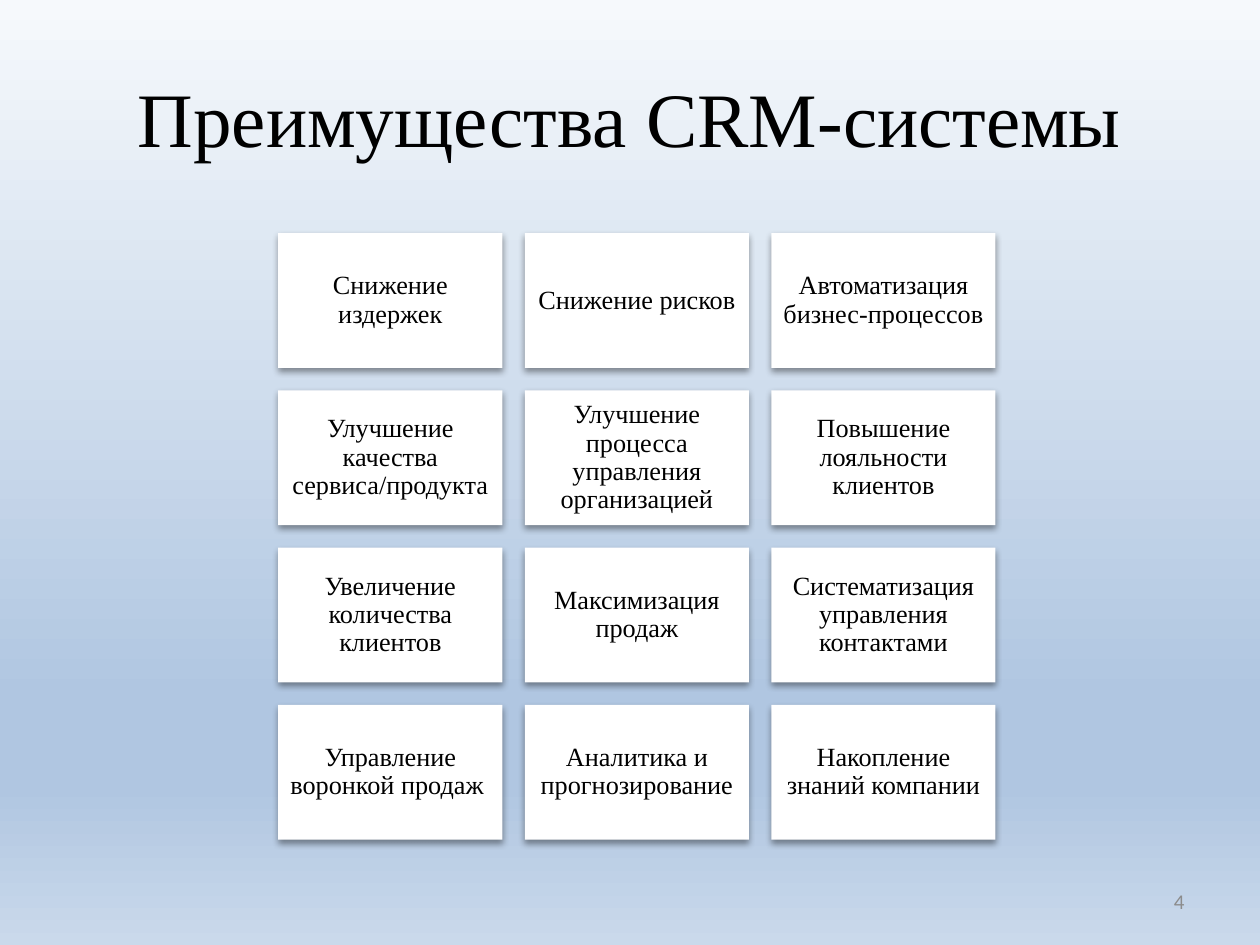
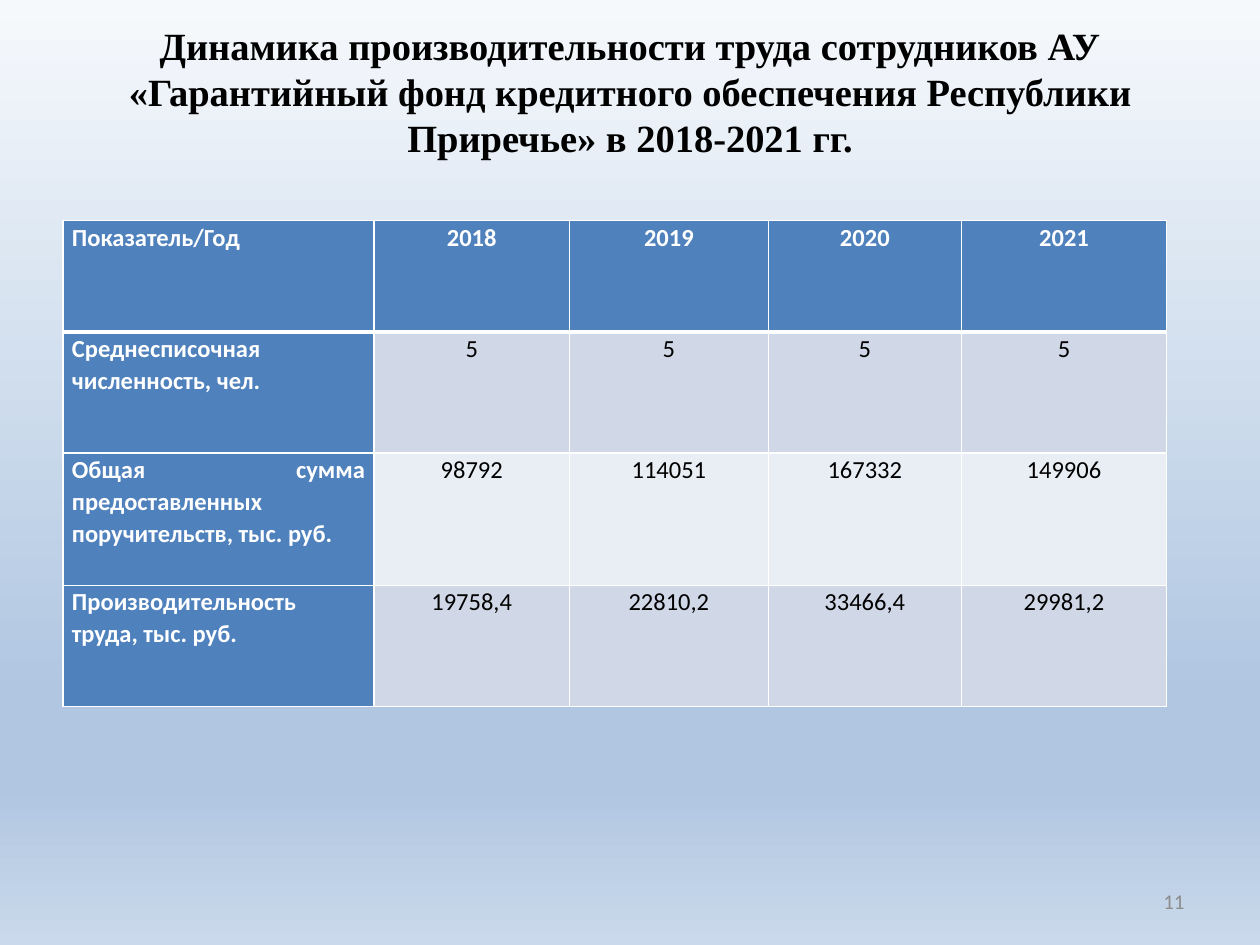
"""Build two slides: the benefits of a CRM system and staff productivity by year."""
from dataclasses import dataclass

import pptx
import pptx.dml.color
import pptx.enum.shapes
import pptx.enum.text
import pptx.oxml
import pptx.oxml.ns
import pptx.util

Cm = pptx.util.Cm
Pt = pptx.util.Pt
RGBColor = pptx.dml.color.RGBColor
Align = pptx.enum.text.PP_ALIGN
Anchor = pptx.enum.text.MSO_ANCHOR
qn = pptx.oxml.ns.qn
NS = pptx.oxml.ns.nsdecls("a")

BLACK = RGBColor(0x00, 0x00, 0x00)
WHITE = RGBColor(0xFF, 0xFF, 0xFF)
GREY = RGBColor(0x8C, 0x8C, 0x8C)
BLUE = RGBColor(0x4F, 0x81, 0xBD)
BAND_DARK = RGBColor(0xD0, 0xD8, 0xE8)
BAND_LIGHT = RGBColor(0xE9, 0xED, 0xF4)
SKY_TOP = RGBColor(0xF6, 0xF9, 0xFC)
SKY_MID = RGBColor(0xB0, 0xC6, 0xE1)
SKY_LOW = RGBColor(0xCA, 0xD9, 0xEB)
SKY_STOPS = [(0, SKY_TOP), (74, SKY_MID), (83, SKY_MID), (100, SKY_LOW)]

SERIF = "Times New Roman"
SANS = "Calibri"


@dataclass(frozen=True)
class Box:
    left: float
    top: float
    width: float
    height: float

    def emu(self) -> tuple:
        return tuple(Cm(v) for v in (self.left, self.top, self.width, self.height))


@dataclass(frozen=True)
class Title:
    text: str
    height: float
    size: float
    bold: bool = False


PAGE_NUMBER = Box(18.21, 17.65, 5.92, 1.02)
FIRST_CARD = Box(5.61, 4.7, 4.52, 2.72)
CARD_GAP = 0.45
CARD_COLUMNS = 3
BENEFITS = [
    "Снижение издержек", "Снижение рисков", "Автоматизация бизнес-процессов",
    "Улучшение качества сервиса/продукта", "Улучшение процесса управления организацией",
    "Повышение лояльности клиентов",
    "Увеличение количества клиентов", "Максимизация продаж",
    "Систематизация управления контактами",
    "Управление воронкой продаж ", "Аналитика и прогнозирование",
    "Накопление знаний компании",
]

TABLE_LEFT, TABLE_TOP = 1.27, 4.45
COLUMN_WIDTHS = [6.27, 3.94, 4.01, 3.89, 4.14]
ROW_HEIGHTS = [2.24, 2.44, 2.67, 2.44]
PRODUCTIVITY = [
    ["Показатель/Год", "2018", "2019", "2020", "2021"],
    ["Среднесписочная численность, чел.", "5", "5", "5", "5"],
    ["Общая сумма предоставленных поручительств, тыс. руб.",
     "98792", "114051", "167332", "149906"],
    ["Производительность труда, тыс. руб.", "19758,4", "22810,2", "33466,4", "29981,2"],
]


def write(tf, text: str, *, size: float, font: str = SERIF, color: RGBColor = BLACK,
          bold: bool = False, align=Align.CENTER, spacing: float = 1.0,
          after: float = 0) -> None:
    """Put one formatted paragraph into a text frame."""
    tf.word_wrap = True
    p = tf.paragraphs[0]
    p.alignment, p.line_spacing, p.space_after = align, spacing, Pt(after)
    r = p.add_run()
    r.text = text
    r.font.name, r.font.size, r.font.bold = font, Pt(size), bold
    r.font.color.rgb = color


def paint_background(master) -> None:
    """Give the master a vertical gradient that all slides inherit."""
    fill = master.background.fill
    fill.gradient()
    fill.gradient_angle = 270
    stops = next(master.element.iter(qn("a:gsLst")))
    for old in list(stops):
        stops.remove(old)
    for pos, color in SKY_STOPS:
        stops.append(pptx.oxml.parse_xml(
            f'<a:gs {NS} pos="{pos * 1000}"><a:srgbClr val="{color}"/></a:gs>'))


def add_text(s, box: Box, text: str, **style) -> None:
    """Add a vertically centred text box."""
    tf = s.shapes.add_textbox(*box.emu()).text_frame
    tf.vertical_anchor = Anchor.MIDDLE
    write(tf, text, **style)


def add_slide(prs, title: Title, number: int):
    """Add a blank slide with its title and page number."""
    s = prs.slides.add_slide(prs.slide_layouts[6])
    add_text(s, Box(1.27, 0.76, 22.86, title.height), title.text,
             size=title.size, bold=title.bold)
    add_text(s, PAGE_NUMBER, str(number), size=12, font=SANS, color=GREY, align=Align.RIGHT)
    return s


def add_card(s, box: Box, text: str) -> None:
    """Add a white card with a soft shadow below it."""
    sp = s.shapes.add_shape(pptx.enum.shapes.MSO_SHAPE.RECTANGLE, *box.emu())
    sp.fill.solid()
    sp.fill.fore_color.rgb = WHITE
    sp.line.fill.background()
    sp.shadow.inherit = False
    sp.element.spPr.find(qn("a:effectLst")).append(pptx.oxml.parse_xml(
        f'<a:outerShdw {NS} blurRad="{Pt(4)}" dist="{Pt(2)}" dir="5400000" rotWithShape="0">'
        f'<a:srgbClr val="{BLACK}"><a:alpha val="40000"/></a:srgbClr></a:outerShdw>'))
    tf = sp.text_frame
    tf.margin_left = tf.margin_right = tf.margin_top = tf.margin_bottom = Cm(0.15)
    tf.vertical_anchor = Anchor.MIDDLE
    write(tf, text, size=15, spacing=0.9)


def set_borders(cell, bottom: float, top: float) -> None:
    """Draw white lines around a table cell."""
    widths = {"lnL": 1, "lnR": 1, "lnT": top, "lnB": bottom}
    for i, (side, width) in enumerate(widths.items()):
        cell._tc.get_or_add_tcPr().insert(i, pptx.oxml.parse_xml(
            f'<a:{side} {NS} w="{Pt(width)}"><a:solidFill><a:srgbClr val="{WHITE}"/>'
            f'</a:solidFill></a:{side}>'))


def add_productivity_table(s) -> None:
    """Add the table with blue headings and banded values."""
    box = Box(TABLE_LEFT, TABLE_TOP, sum(COLUMN_WIDTHS), sum(ROW_HEIGHTS))
    table = s.shapes.add_table(len(ROW_HEIGHTS), len(COLUMN_WIDTHS), *box.emu()).table
    for column, width in zip(table.columns, COLUMN_WIDTHS):
        column.width = Cm(width)
    for i, (row, height) in enumerate(zip(table.rows, ROW_HEIGHTS)):
        row.height = Cm(height)
        for j, cell in enumerate(row.cells):
            heading = i == 0 or j == 0
            band = BAND_DARK if i % 2 else BAND_LIGHT
            cell.fill.solid()
            cell.fill.fore_color.rgb = BLUE if heading else band
            cell.margin_left = cell.margin_right = Cm(0.18)
            cell.margin_top = cell.margin_bottom = 0
            set_borders(cell, bottom=3 if i == 0 else 1, top=3 if i == 1 else 1)
            write(cell.text_frame, PRODUCTIVITY[i][j], size=14, font=SANS, bold=heading,
                  color=WHITE if heading else BLACK, spacing=1.07, after=8,
                  align=Align.CENTER if j else Align.JUSTIFY)


def main() -> None:
    """Build and save the presentation."""
    prs = pptx.Presentation()
    prs.slide_width, prs.slide_height = Cm(25.4), Cm(19.05)
    paint_background(prs.slide_master)

    s = add_slide(prs, Title("Преимущества CRM-системы", 3.18, 44), 4)
    for i, benefit in enumerate(BENEFITS):
        row, column = divmod(i, CARD_COLUMNS)
        add_card(s, Box(FIRST_CARD.left + column * (FIRST_CARD.width + CARD_GAP),
                        FIRST_CARD.top + row * (FIRST_CARD.height + CARD_GAP),
                        FIRST_CARD.width, FIRST_CARD.height), benefit)

    s = add_slide(prs, Title(
        "Динамика производительности труда сотрудников АУ «Гарантийный фонд кредитного "
        "обеспечения Республики Приречье» в 2018-2021 гг.", 2.16, 22, True), 11)
    add_productivity_table(s)

    prs.save("out.pptx")


if __name__ == "__main__":
    main()
